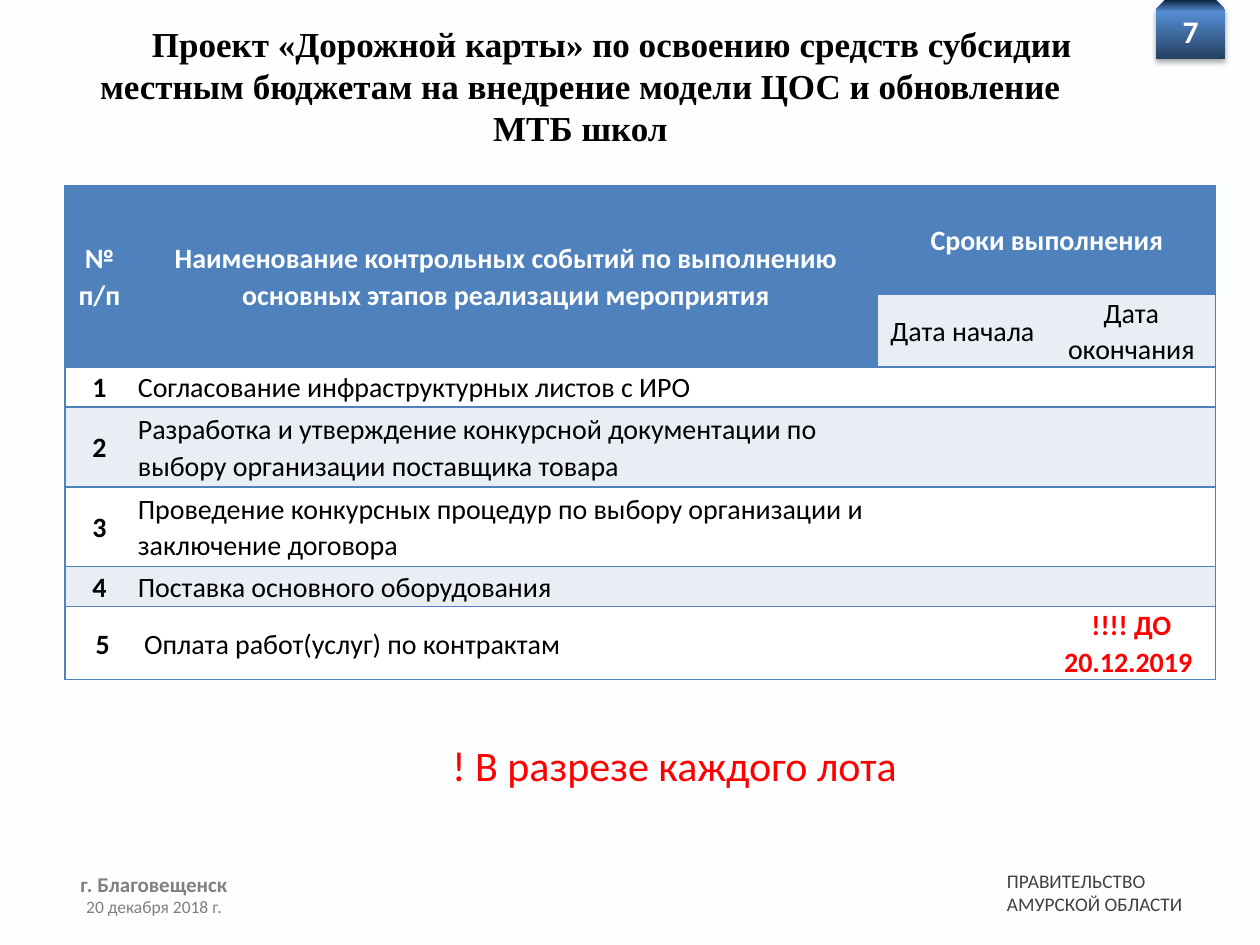
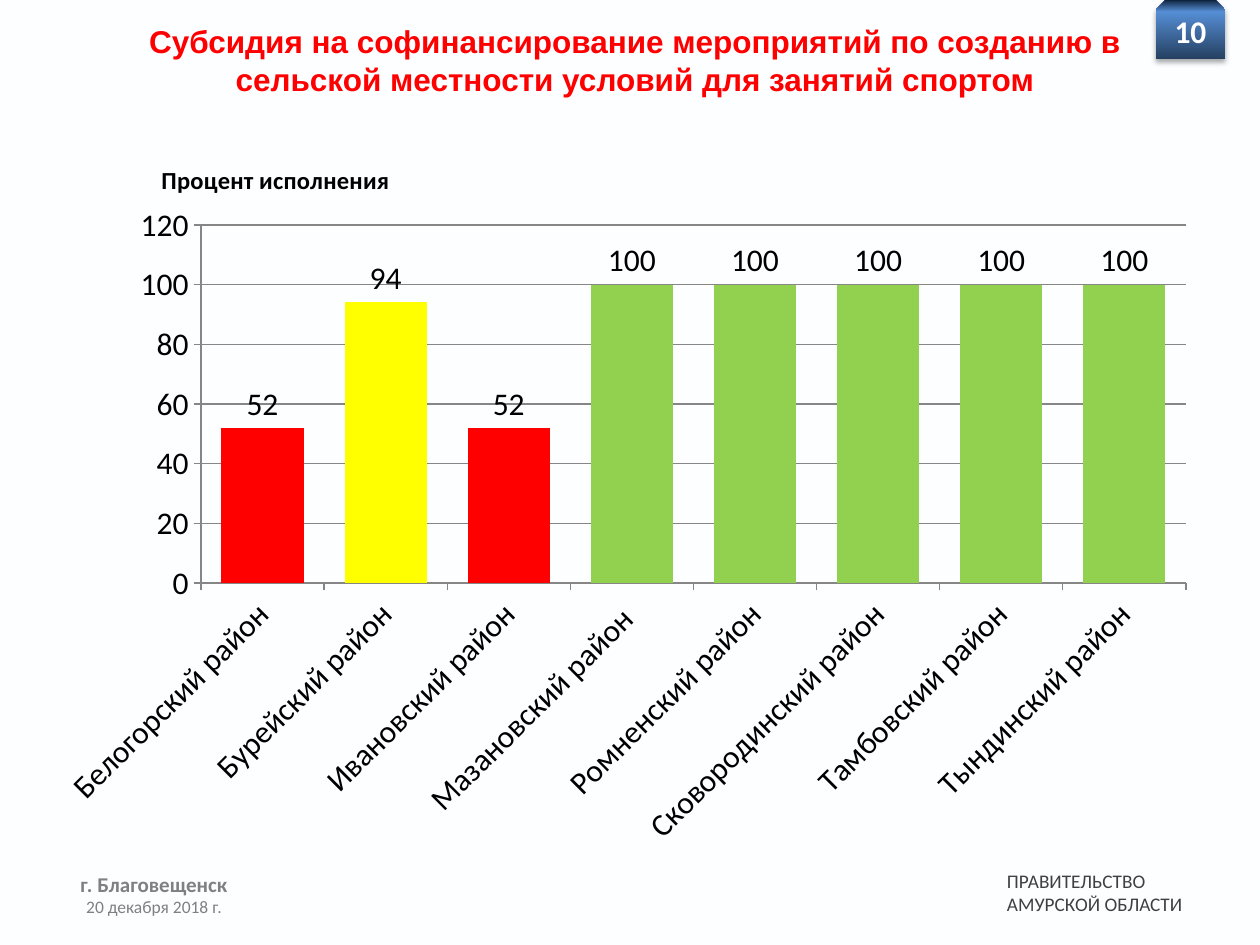
import lxml.etree
import pptx
import pptx.chart.data
import pptx.dml.color
import pptx.enum.chart
import pptx.enum.dml
import pptx.enum.shapes
import pptx.enum.text
import pptx.oxml
import pptx.oxml.ns
import pptx.util

RGB = pptx.dml.color.RGBColor
ALIGN = pptx.enum.text.PP_ALIGN
ANCHOR = pptx.enum.text.MSO_ANCHOR
QN = pptx.oxml.ns.qn

PAPER = RGB(0xFD, 0xFE, 0xFF)
WHITE = RGB(0xFF, 0xFF, 0xFF)
BLACK = RGB(0, 0, 0)
RED = RGB(0xFF, 0, 0)
YELLOW = RGB(0xFF, 0xFF, 0)
GREEN = RGB(0x92, 0xD0, 0x50)
BLUE = RGB(0x4F, 0x81, 0xBD)
PALE_BLUE = RGB(0xE9, 0xED, 0xF4)
GREY = RGB(0x80, 0x80, 0x80)
AXIS_GREY = RGB(0x86, 0x86, 0x86)
DARK_GREY = RGB(0x40, 0x40, 0x40)
TAB_STOPS = (
    (0, RGB(0x25, 0x40, 0x61)),
    (80, RGB(0x55, 0x8E, 0xD5)),
    (100, RGB(0x0F, 0x24, 0x3E)),
)

BODY_FONT = "Calibri"
NO_STYLE_TABLE = "{2D5ABB26-0587-4C30-8999-92F81FD0307C}"
A_NS = pptx.oxml.ns.nsdecls("a")
C_NS = pptx.oxml.ns.nsdecls("c")

COLUMN_WIDTHS = (69, 744, 169, 169)
ROW_HEIGHTS = (108, 73, 40, 80, 80, 40, 73)
ROADMAP = (
    ("№ п/п", "Наименование контрольных событий по выполнению основных этапов реализации мероприятия",
     "Сроки выполнения", ""),
    ("", "", "Дата начала", "Дата окончания"),
    ("1", "Согласование инфраструктурных листов с ИРО", "", ""),
    ("2", "Разработка и утверждение конкурсной документации по выбору организации поставщика товара", "", ""),
    ("3", "Проведение конкурсных процедур по выбору организации и заключение договора", "", ""),
    ("4", "Поставка основного оборудования", "", ""),
    (" 5", " Оплата работ(услуг) по контрактам", "", "!!!! ДО 20.12.2019 "),
)
EXECUTION = {
    "Белогорский район": 52,
    "Бурейский район": 94,
    "Ивановский район": 52,
    "Мазановский район ": 100,
    "Ромненский район": 100,
    "Сковородинский район": 100,
    "Тамбовский район": 100,
    "Тындинский район": 100,
}


def px(length):
    """Turn pixels into EMU."""
    return pptx.util.Emu(round(length * 914400 / 126))


def set_font(font, size, color, bold=False, face=BODY_FONT):
    """Set the size, colour, weight and face of a font."""
    font.size = pptx.util.Pt(size)
    font.color.rgb = color
    font.bold = bold
    font.name = face


def add_text(slide, box, lines, size, color, bold=False, face=BODY_FONT,
             align=ALIGN.CENTER, anchor=ANCHOR.TOP, inset=True):
    """Add a wrapped text box with one paragraph per line and return its frame."""
    frame = slide.shapes.add_textbox(*map(px, box)).text_frame
    frame.word_wrap = True
    frame.vertical_anchor = anchor
    if not inset:
        frame.margin_left = frame.margin_top = frame.margin_right = frame.margin_bottom = 0
    frame.text = "\n".join(lines)
    for paragraph in frame.paragraphs:
        paragraph.alignment = align
        set_font(paragraph.font, size, color, bold, face)
    return frame


def add_page_tab(slide, box, number):
    """Add the gradient tab with the page number."""
    left, top, width, height = box
    tab = slide.shapes.add_shape(
        pptx.enum.shapes.MSO_SHAPE.SNIP_2_SAME_RECTANGLE, *map(px, box))
    tab.line.fill.background()
    tab.fill.gradient()
    tab.fill.gradient_angle = 90
    stops = tab._element.spPr.find(QN("a:gradFill")).find(QN("a:gsLst"))
    for stop in list(stops):
        stops.remove(stop)
    for percent, color in TAB_STOPS:
        stops.append(pptx.oxml.parse_xml(
            f'<a:gs {A_NS} pos="{percent * 1000}"><a:srgbClr val="{color}"/></a:gs>'))
    tab._element.spPr.append(pptx.oxml.parse_xml(
        f'<a:effectLst {A_NS}><a:outerShdw blurRad="39400" dist="22900" dir="5400000" '
        'rotWithShape="0"><a:srgbClr val="000000"><a:alpha val="35000"/></a:srgbClr>'
        '</a:outerShdw></a:effectLst>'))
    add_text(slide, (left, top + 6, width, height - 5), [str(number)], 18, WHITE, True)


def add_footer(slide, box):
    """Add the place and date on the left and the issuer on the right."""
    left, top, width, height = box
    add_text(slide, (left, top, 218, 69), ["г. Благовещенск"], 12, GREY, True,
             anchor=ANCHOR.MIDDLE)
    add_text(slide, (left, top + 40, 218, 39), ["20 декабря 2018 г."], 10, GREY)
    add_text(slide, (left + width - 238, top + 19, 238, height - 33),
             ["ПРАВИТЕЛЬСТВО", "АМУРСКОЙ ОБЛАСТИ"], 11, DARK_GREY,
             align=ALIGN.LEFT, inset=False)


def add_page(deck, number):
    """Add a blank slide with the shared tab and footer."""
    slide = deck.slides.add_slide(deck.slide_layouts[6])
    add_footer(slide, (45, 850, 1200, 80))
    add_page_tab(slide, (1156, 0, 69, 59), number)
    return slide


def add_borders(cell, sides):
    """Draw thin blue borders on the given sides of a cell."""
    properties = cell._tc.get_or_add_tcPr()
    for side in sides:
        properties.append(pptx.oxml.parse_xml(
            f'<a:ln{side} {A_NS} w="9525"><a:solidFill><a:srgbClr val="{BLUE}"/>'
            f'</a:solidFill></a:ln{side}>'))


def style_cell(cell, row, column):
    """Give a roadmap cell its borders, fill and text style."""
    last_column = len(COLUMN_WIDTHS) - 1
    outer = {0: ("L",), last_column: ("R",)}.get(column, ())
    add_borders(cell, outer + ("T", "B"))
    heading = row == 0 or (row == 1 and column < 2)
    cell.fill.solid()
    cell.fill.fore_color.rgb = BLUE if heading else PALE_BLUE if row % 2 else WHITE
    cell.vertical_anchor = ANCHOR.MIDDLE
    cell.margin_left = cell.margin_right = px(4)
    cell.margin_top = cell.margin_bottom = 0
    deadline = row > 1 and column == last_column
    color = WHITE if heading else RED if deadline else BLACK
    paragraph = cell.text_frame.paragraphs[0]
    paragraph.alignment = ALIGN.LEFT if row > 1 and column == 1 else ALIGN.CENTER
    paragraph.line_spacing = 1.07
    set_font(paragraph.font, 16, color, heading or column == 0 or deadline)


def add_roadmap(slide, box):
    """Add the table of control events and their dates."""
    table = slide.shapes.add_table(
        len(ROW_HEIGHTS), len(COLUMN_WIDTHS), *map(px, box)).table
    table.first_row = table.horz_banding = False
    table._tbl.tblPr.find(QN("a:tableStyleId")).text = NO_STYLE_TABLE
    for column, width in zip(table.columns, COLUMN_WIDTHS):
        column.width = px(width)
    for row, height in zip(table.rows, ROW_HEIGHTS):
        row.height = px(height)
    for row, texts in enumerate(ROADMAP):
        for column, text in enumerate(texts):
            cell = table.cell(row, column)
            cell.text = text
            style_cell(cell, row, column)
    for first, last in (((0, 0), (1, 0)), ((0, 1), (1, 1)), ((0, 2), (0, 3))):
        table.cell(*first).merge(table.cell(*last))


def place_in_chart(element, index, box, target="", **lengths):
    """Place a chart part by pixel lengths counted from the chart's corner."""
    automatic = element.find(QN("c:layout"))
    if automatic is not None:
        element.remove(automatic)
    width, height = box[2:]
    inner = f'<c:layoutTarget val="{target}"/>' if target else ""
    modes = '<c:xMode val="edge"/><c:yMode val="edge"/>'
    values = "".join(
        f'<c:{key} val="{length / (width if key in "xw" else height)}"/>'
        for key, length in lengths.items())
    element.insert(index, pptx.oxml.parse_xml(
        f'<c:layout {C_NS}><c:manualLayout>{inner}{modes}{values}</c:manualLayout></c:layout>'))


def style_axes(chart):
    """Set the scale, lines and slanted labels of both axes."""
    districts, percent = chart.category_axis, chart.value_axis
    for axis in (districts, percent):
        axis.major_tick_mark = pptx.enum.chart.XL_TICK_MARK.OUTSIDE
        axis.format.line.color.rgb = AXIS_GREY
        set_font(axis.tick_labels.font, 18, BLACK)
    districts._element.find(QN("c:txPr")).find(QN("a:bodyPr")).set("rot", "-2700000")
    percent.minimum_scale, percent.maximum_scale, percent.major_unit = 0, 120, 20
    percent.has_major_gridlines = True
    percent.major_gridlines.format.line.color.rgb = AXIS_GREY


def add_execution_chart(slide, box):
    """Add the column chart of execution by district."""
    data = pptx.chart.data.CategoryChartData(number_format="General")
    data.categories = list(EXECUTION)
    data.add_series("Процент исполнения", list(EXECUTION.values()))
    chart = slide.shapes.add_chart(
        pptx.enum.chart.XL_CHART_TYPE.COLUMN_CLUSTERED, *map(px, box), data).chart
    set_font(chart.font, 18, BLACK)
    chart.has_legend = False
    chart.has_title = True
    heading = chart.chart_title.text_frame
    heading.text = "Процент исполнения"
    set_font(heading.paragraphs[0].font, 14, BLACK, True)
    place_in_chart(chart.chart_title._element, 1, box, x=112, y=0)
    place_in_chart(chart._chartSpace.chart.plotArea, 0, box, "inner",
                   x=156, y=67, w=985, h=358)
    style_axes(chart)
    plot = chart.plots[0]
    plot.gap_width = 50
    plot.vary_by_categories = False
    plot.has_data_labels = True
    labels = plot.data_labels
    labels.show_value = True
    labels.number_format, labels.number_format_is_linked = "0", False
    labels.position = pptx.enum.chart.XL_LABEL_POSITION.OUTSIDE_END
    set_font(labels.font, 18, BLACK)
    for index, share in enumerate(EXECUTION.values()):
        fill = plot.series[0].points[index].format.fill
        fill.solid()
        fill.fore_color.rgb = GREEN if share == 100 else YELLOW if share > 90 else RED


def build_roadmap_slide(deck):
    """Build the slide with the roadmap table."""
    slide = add_page(deck, 7)
    title = add_text(
        slide, (45, 16, 1071, 118),
        ["Проект «Дорожной карты» по освоению средств субсидии местным бюджетам "
         "на внедрение модели ЦОС и обновление МТБ школ"],
        20, BLACK, True, "Times New Roman")
    title.paragraphs[0]._p.get_or_add_pPr().set("indent", str(px(63)))
    add_roadmap(slide, (65, 186, sum(COLUMN_WIDTHS), sum(ROW_HEIGHTS)))
    add_text(slide, (89, 740, 1171, 51), ["! В разрезе каждого лота"], 24, RED, inset=False)


def build_execution_slide(deck):
    """Build the slide with the execution chart."""
    slide = add_page(deck, 10)
    add_text(slide, (64, 16, 1142, 89),
             ["Субсидия на софинансирование мероприятий по созданию в сельской "
              "местности условий для занятий спортом"], 18, RED, True, "Arial")
    add_execution_chart(slide, (45, 158, 1160, 735))


def main():
    """Build and save the deck."""
    deck = pptx.Presentation()
    deck.slide_width, deck.slide_height = px(1260), px(945)
    paper = deck.slide_master.background.fill
    paper.solid()
    paper.fore_color.rgb = PAPER
    build_roadmap_slide(deck)
    build_execution_slide(deck)
    deck.save("out.pptx")


if __name__ == "__main__":
    main()
